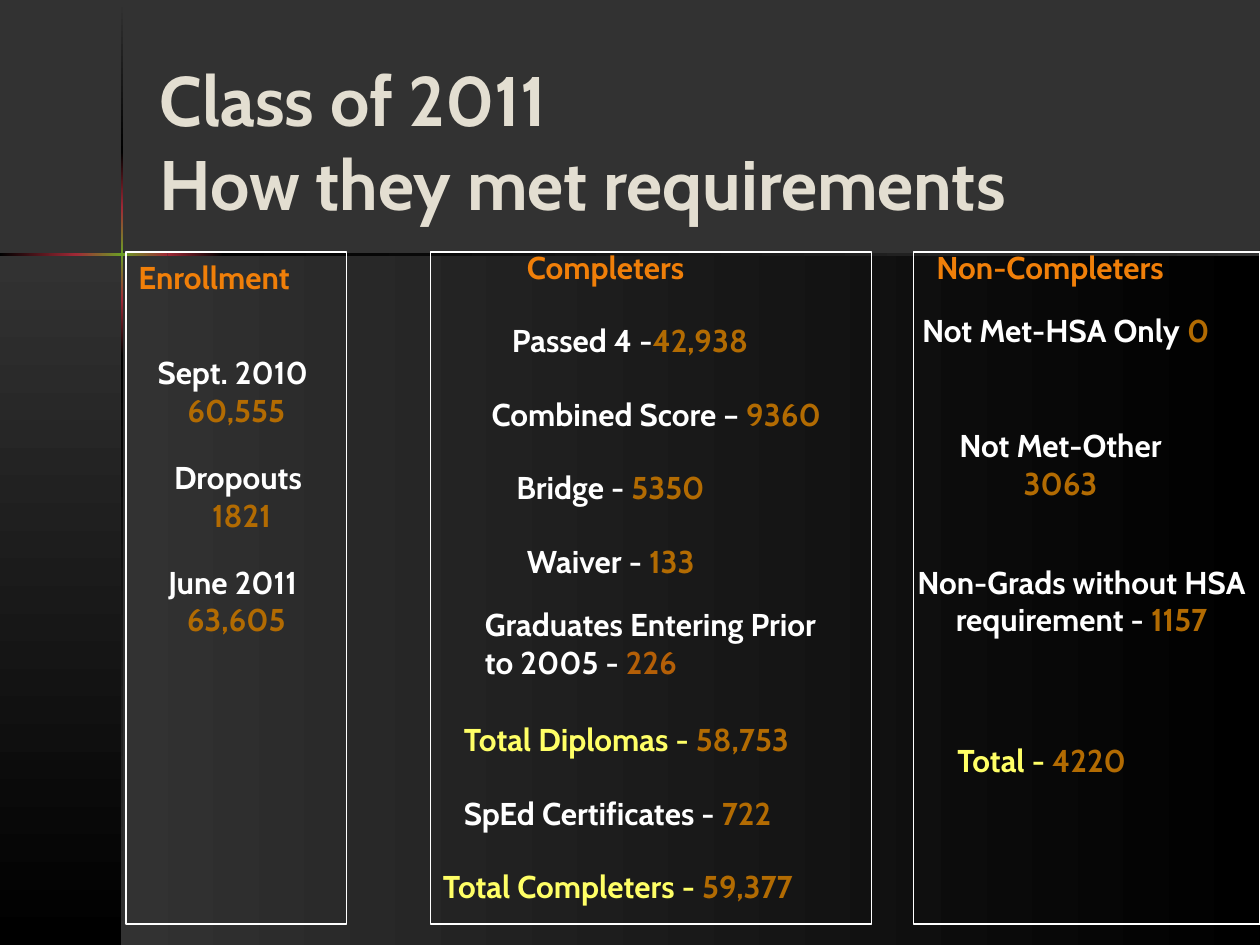
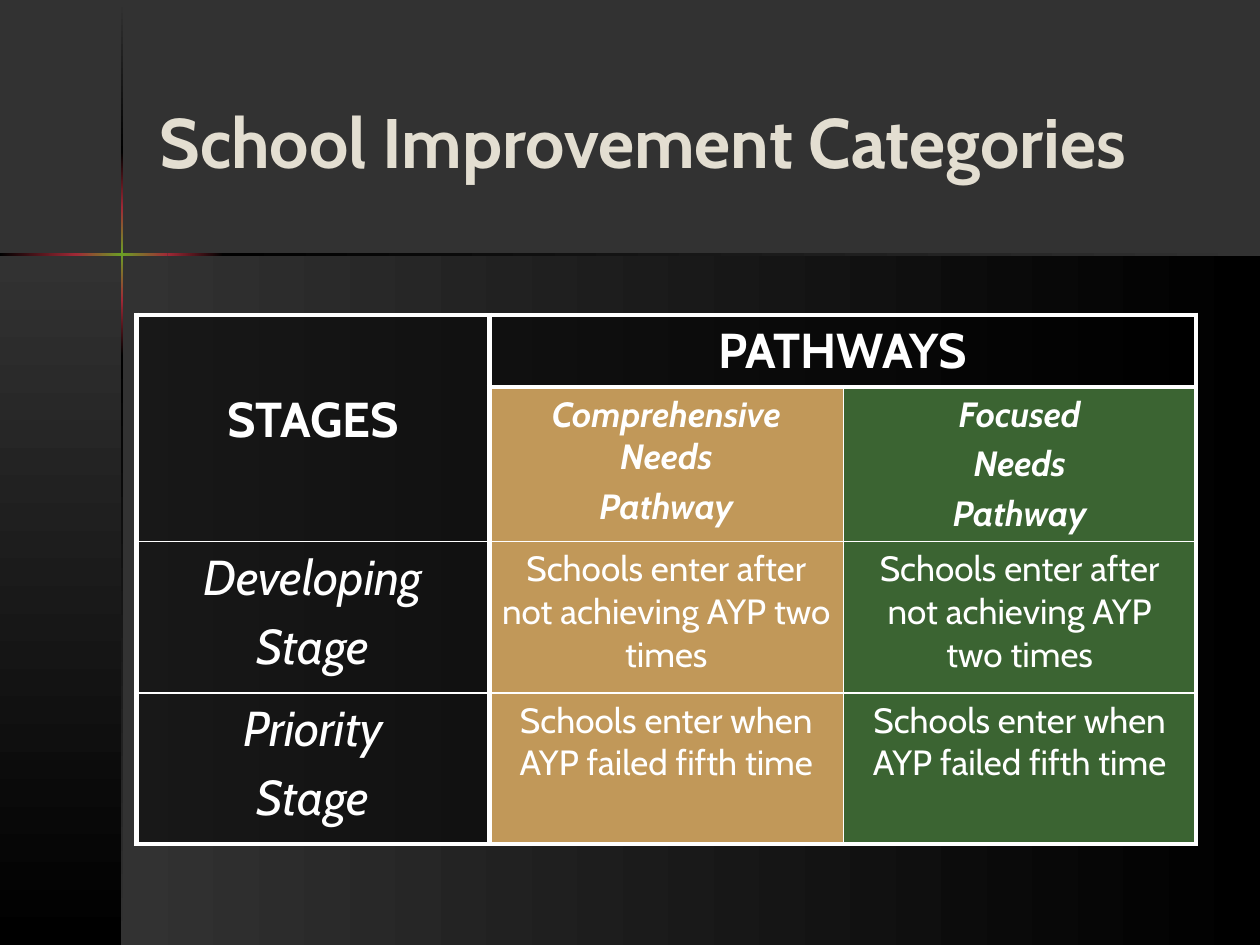
from dataclasses import dataclass
from typing import Any, Sequence

from lxml import etree
from pptx import Presentation
from pptx.dml.color import RGBColor
from pptx.enum.shapes import MSO_SHAPE
from pptx.enum.text import MSO_ANCHOR, MSO_AUTO_SIZE, PP_ALIGN
from pptx.oxml.ns import qn
from pptx.util import Pt

RECTANGLE = MSO_SHAPE.RECTANGLE
MIDDLE, TOP = MSO_ANCHOR.MIDDLE, MSO_ANCHOR.TOP
LEFT, CENTER = PP_ALIGN.LEFT, PP_ALIGN.CENTER
FIXED_SIZE, GROW = MSO_AUTO_SIZE.NONE, MSO_AUTO_SIZE.SHAPE_TO_FIT_TEXT

FONT = "Cabin"
GREY, BLACK, WHITE = "323232", "000000", "FFFFFF"
RED, GREEN = "9F2936", "6B9F25"
CREAM, ORANGE, YELLOW = "E3DED1", "F07F09", "FFFF66"
BROWN, RUST = "B26B02", "B45F07"
TAN, FOREST = "C19859", "3B6432"

SLIDE_WIDTH, SLIDE_HEIGHT = 720, 540
CROSS_LEFT, CROSS_TOP, CROSS_WEIGHT = 69.12, 144.72, 1.44
BAND_LEFT, BAND_TOP = 69.84, 145.44


@dataclass(frozen=True)
class Box:
    left: float
    top: float
    width: float
    height: float

    def lengths(self) -> list[int]:
        return [Pt(value) for value in (self.left, self.top, self.width, self.height)]


@dataclass(frozen=True)
class Label:
    left: float
    top: float
    width: float
    text: str
    value: str = ""
    color: str = WHITE
    value_color: str = BROWN
    alignment: Any = LEFT
    lines: int = 1


@dataclass(frozen=True)
class CellStyle:
    size: float
    bold: bool
    italic: bool


@dataclass(frozen=True)
class TableCell:
    row: int
    column: int
    paragraphs: tuple[str, ...]
    style: CellStyle


HEADING = CellStyle(28, True, False)
PATHWAY = CellStyle(20, True, True)
STAGE = CellStyle(28, False, True)
DETAIL = CellStyle(20, False, False)

FRAMES = [Box(left, 144, width, 384) for left, width in ((246, 252), (522, 198), (72, 126))]

LABELS = [
    Label(72, 144, 186, "Enrollment", color=ORANGE),
    Label(66, 198, 138, "Sept. 2010 \v", "60,555", alignment=CENTER, lines=2),
    Label(72, 258, 132, "Dropouts \v", "1821", alignment=CENTER, lines=2),
    Label(66, 318, 138, "June 2011 \v", "63,605", alignment=CENTER, lines=2),
    Label(294, 138, 186, "Completers", color=ORANGE),
    Label(264, 180, 192, "Passed 4 -", "42,938", alignment=CENTER),
    Label(246, 222, 258, "Combined Score – ", "9360", alignment=CENTER),
    Label(288, 264, 162, "Bridge - ", "5350"),
    Label(294, 306, 162, "Waiver - ", "133"),
    Label(270, 342, 204, "Graduates Entering Prior to 2005 - ", "226", value_color=RUST, lines=2),
    Label(258, 408, 246, "Total Diplomas - ", "58,753", YELLOW),
    Label(258, 450, 234, "SpEd Certificates - ", "722"),
    Label(246, 492, 270, "Total Completers - ", "59,377", YELLOW),
    Label(528, 138, 168, "Non-Completers", color=ORANGE),
    Label(516, 174, 186, "Not Met-HSA Only ", "0", alignment=CENTER, lines=2),
    Label(528, 240, 156, "Not Met-Other ", "3063", alignment=CENTER, lines=2),
    Label(516, 318, 204, "Non-Grads without HSA requirement - ", "1157", alignment=CENTER, lines=3),
    Label(540, 420, 180, "Total - ", "4220", YELLOW),
]

ENTER_DEVELOPING = ("Schools enter after not achieving AYP two times",)
ENTER_PRIORITY = ("Schools enter when AYP failed fifth time",)
TABLE_CELLS = [
    TableCell(0, 0, ("STAGES",), HEADING),
    TableCell(0, 1, ("PATHWAYS",), HEADING),
    TableCell(1, 1, ("Comprehensive Needs", "Pathway"), PATHWAY),
    TableCell(1, 2, ("Focused", "Needs", "Pathway"), PATHWAY),
    TableCell(2, 0, ("Developing", "Stage"), STAGE),
    TableCell(2, 1, ENTER_DEVELOPING, DETAIL),
    TableCell(2, 2, ENTER_DEVELOPING, DETAIL),
    TableCell(3, 0, ("Priority", "Stage"), STAGE),
    TableCell(3, 1, ENTER_PRIORITY, DETAIL),
    TableCell(3, 2, ENTER_PRIORITY, DETAIL),
]
COLUMN_WIDTHS = (201.6, 202.3, 201.6)
ROW_HEIGHTS = (41, 88, 86.4, 86.4)
COLUMN_FILLS = (BLACK, TAN, FOREST)


def hex_color(value: str) -> RGBColor:
    return RGBColor.from_string(value)


def apply_format(target: Any, values: dict[str, Any]) -> None:
    for name, value in values.items():
        setattr(target, name, value)


def format_font(font: Any, size: float, color: str, bold: bool = True, italic: bool = False) -> None:
    apply_format(font, {"name": FONT, "size": Pt(size), "bold": bold, "italic": italic})
    font.color.rgb = hex_color(color)


def add_gradient(slide: Any, box: Box, colors: Sequence[str], vertical: bool) -> Any:
    shape = slide.shapes.add_shape(RECTANGLE, *box.lengths())
    shape.shadow.inherit = False
    shape.line.fill.background()
    shape.fill.gradient()
    shape.fill.gradient_angle = 270 if vertical else 0
    stops = next(shape.element.iter(qn("a:gsLst")))
    for stop in list(stops):
        stops.remove(stop)
    for index, color in enumerate(colors):
        position = 100000 * index // (len(colors) - 1)
        stop = etree.SubElement(stops, qn("a:gs"), pos=str(position))
        etree.SubElement(stop, qn("a:srgbClr"), val=color)
    return shape


def add_hairline(slide: Any, edges: Sequence[float], gradients: Sequence[Sequence[str]], vertical: bool) -> list[Any]:
    pieces = []
    for start, end, colors in zip(edges, edges[1:], gradients):
        if vertical:
            box = Box(CROSS_LEFT, start, CROSS_WEIGHT, end - start)
        else:
            box = Box(start, CROSS_TOP, end - start, CROSS_WEIGHT)
        pieces.append(add_gradient(slide, box, colors, vertical))
    return pieces


def decorate_master(master: Any, slide: Any) -> None:
    master.background.fill.solid()
    master.background.fill.fore_color.rgb = hex_color(GREY)
    band_height = SLIDE_HEIGHT - BAND_TOP
    main_band = Box(BAND_LEFT, BAND_TOP, SLIDE_WIDTH - BAND_LEFT, band_height)
    side_band = Box(0, BAND_TOP, BAND_LEFT, band_height)
    cross = ((BLACK, RED), (RED, GREEN, RED), (RED, BLACK), (BLACK, GREY))
    shapes = [
        add_gradient(slide, main_band, (GREY, BLACK), False),
        add_gradient(slide, side_band, (GREY, BLACK), True),
        *add_hairline(slide, (0.72, 87.12, 118.8, 171.36, 203.04, SLIDE_HEIGHT), ((GREY, BLACK), *cross), True),
        *add_hairline(slide, (0, 43.5, 95.76, 127.44, SLIDE_WIDTH), cross, False),
    ]
    for index, shape in enumerate(shapes):
        master.shapes.element.insert(2 + index, shape.element)


def set_title(slide: Any, text: str) -> None:
    title = slide.shapes.title
    apply_format(title, {"left": Pt(84), "top": Pt(24), "width": Pt(594), "height": Pt(113)})
    apply_format(title.text_frame, {
        "text": text, "word_wrap": True, "auto_size": FIXED_SIZE, "vertical_anchor": MIDDLE,
    })
    paragraph = title.text_frame.paragraphs[0]
    paragraph.alignment = LEFT
    for run in paragraph.runs:
        format_font(run.font, 40, CREAM)


def add_label(slide: Any, label: Label) -> None:
    box = Box(label.left, label.top, label.width, 7 + 22 * label.lines)
    frame = slide.shapes.add_textbox(*box.lengths()).text_frame
    apply_format(frame, {"word_wrap": True, "auto_size": GROW, "vertical_anchor": TOP})
    paragraph = frame.paragraphs[0]
    apply_format(paragraph, {"text": label.text, "alignment": label.alignment})
    for run in paragraph.runs:
        format_font(run.font, 18, label.color)
    if label.value:
        run = paragraph.add_run()
        run.text = label.value
        format_font(run.font, 18, label.value_color)


def add_frame(slide: Any, box: Box) -> None:
    shape = slide.shapes.add_shape(RECTANGLE, *box.lengths())
    shape.shadow.inherit = False
    shape.fill.background()
    shape.line.color.rgb = hex_color(WHITE)
    shape.line.width = Pt(1)


def border_widths(row: int, column: int) -> dict[str, float]:
    if row == 0 and column > 0:
        return dict.fromkeys(("lnL", "lnR", "lnT", "lnB"), 3)
    outer_bottom = 3 if column == 0 else 2.25
    return {
        "lnL": (3, 3, 1)[column],
        "lnR": (3, 1, 2.25)[column],
        "lnT": 3 if row < 2 else 1,
        "lnB": outer_bottom if row == 3 else 1,
    }


def style_cell(cell: Any, row: int, column: int) -> None:
    properties = cell._tc.get_or_add_tcPr()
    for edge, width in border_widths(row, column).items():
        line = etree.SubElement(properties, qn(f"a:{edge}"), w=str(Pt(width)))
        fill = etree.SubElement(line, qn("a:solidFill"))
        etree.SubElement(fill, qn("a:srgbClr"), val=WHITE)
    color = BLACK if row == 0 else COLUMN_FILLS[column]
    cell.fill.solid()
    cell.fill.fore_color.rgb = hex_color(color)
    if color == BLACK:
        fill_color = properties.find(f"{qn('a:solidFill')}/{qn('a:srgbClr')}")
        etree.SubElement(fill_color, qn("a:alpha"), val="50000")


def write_cell(cell: Any, content: TableCell) -> None:
    style = content.style
    cell.text = "\n".join(content.paragraphs)
    for index, paragraph in enumerate(cell.text_frame.paragraphs):
        apply_format(paragraph, {
            "alignment": CENTER, "space_before": Pt(style.size * 0.2 if index else 0),
        })
        format_font(paragraph.runs[0].font, style.size, WHITE, style.bold, style.italic)


def add_categories_table(slide: Any) -> None:
    box = Box(78, 180, sum(COLUMN_WIDTHS), sum(ROW_HEIGHTS))
    table = slide.shapes.add_table(len(ROW_HEIGHTS), len(COLUMN_WIDTHS), *box.lengths()).table
    apply_format(table, {"first_row": False, "horz_banding": False})
    for column, width in zip(table.columns, COLUMN_WIDTHS):
        column.width = Pt(width)
    for row, height in zip(table.rows, ROW_HEIGHTS):
        row.height = Pt(height)
    for row in range(len(ROW_HEIGHTS)):
        for column in range(len(COLUMN_WIDTHS)):
            style_cell(table.cell(row, column), row, column)
    table.cell(0, 0).merge(table.cell(1, 0))
    table.cell(0, 1).merge(table.cell(0, 2))
    for content in TABLE_CELLS:
        write_cell(table.cell(content.row, content.column), content)
    apply_format(table.cell(0, 0), {"vertical_anchor": MIDDLE, "margin_bottom": Pt(13)})


def main() -> None:
    presentation = Presentation()
    apply_format(presentation, {"slide_width": Pt(SLIDE_WIDTH), "slide_height": Pt(SLIDE_HEIGHT)})
    title_only = presentation.slide_layouts[5]

    class_slide = presentation.slides.add_slide(title_only)
    decorate_master(presentation.slide_master, class_slide)
    set_title(class_slide, "Class of 2011\vHow they met requirements")
    for label in LABELS:
        add_label(class_slide, label)
    for frame in FRAMES:
        add_frame(class_slide, frame)

    categories_slide = presentation.slides.add_slide(title_only)
    set_title(categories_slide, "School Improvement Categories")
    add_categories_table(categories_slide)

    presentation.save("out.pptx")


if __name__ == "__main__":
    main()
